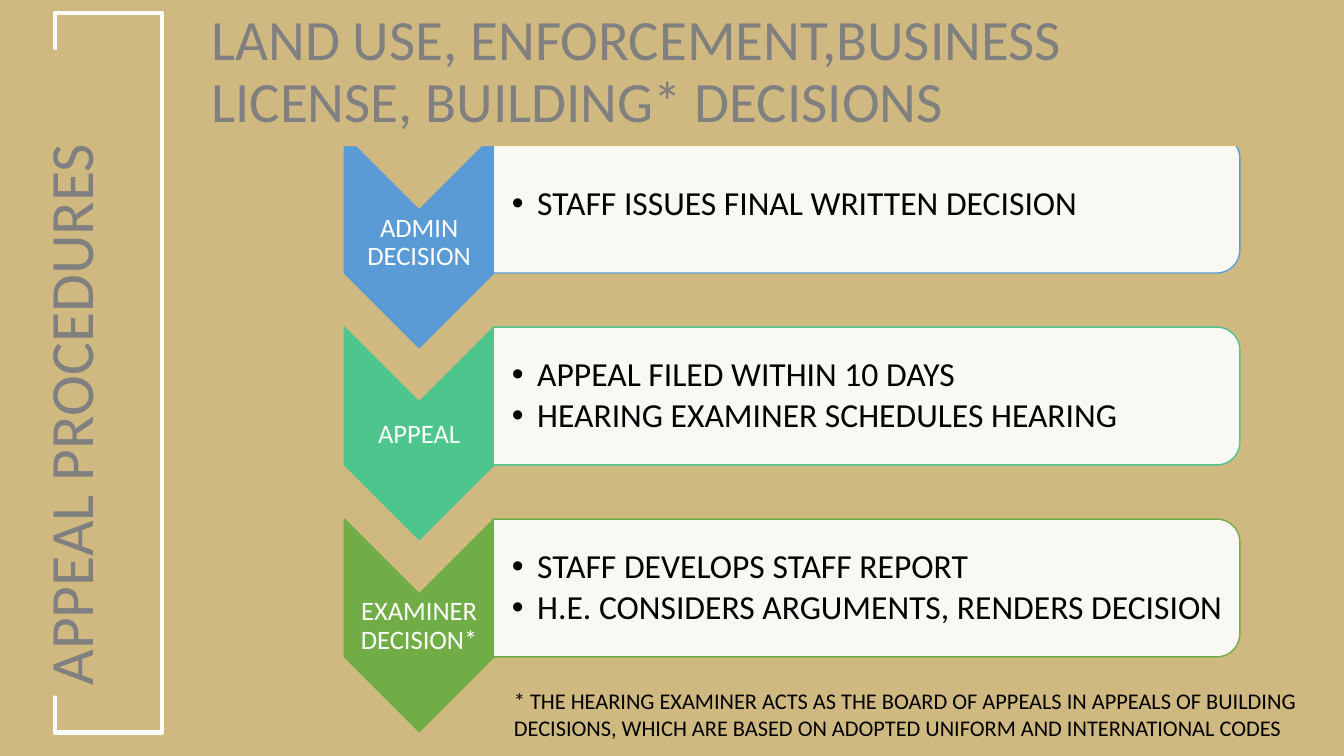
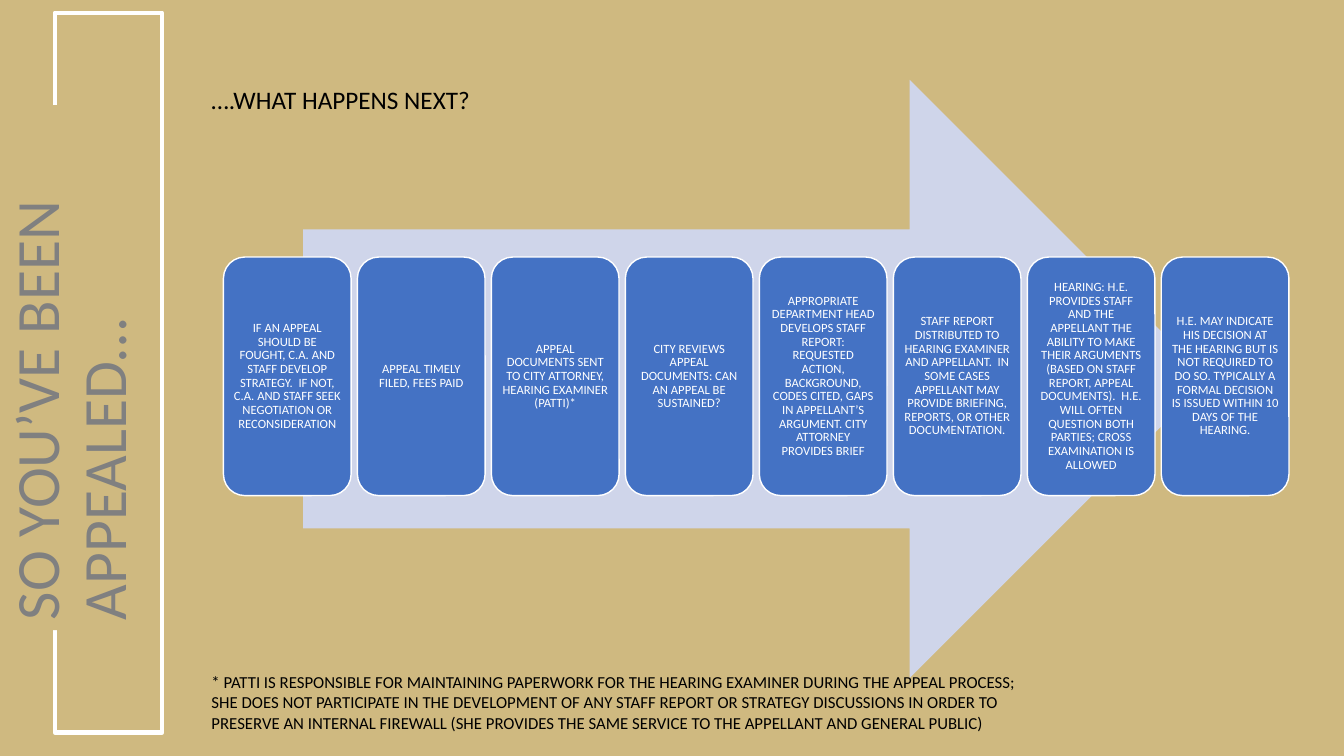
from lxml import etree
from pptx import Presentation
from pptx import util as u
from pptx.dml.color import RGBColor
from pptx.enum import shapes, text
from pptx.oxml.ns import qn

COLORS = {
    "sand": "CFB980", "white": "FFFFFF", "black": "000000", "gray": "808080",
    "sky": "5B9BD5", "mint": "4DC58D", "leaf": "70AD47",
    "blue": "4472C4", "haze": "CFD5EA",
}
FONT = "Calibri"
COLUMNS, ROWS = 160, 90
SHAPE = shapes.MSO_SHAPE
ALIGN, ANCHOR = text.PP_ALIGN, text.MSO_ANCHOR

STEPS = [
    ("sky", "ADMIN DECISION", ["STAFF ISSUES FINAL WRITTEN DECISION"]),
    ("mint", "APPEAL", ["APPEAL FILED WITHIN 10 DAYS",
                        "HEARING EXAMINER SCHEDULES HEARING"]),
    ("leaf", "EXAMINER DECISION*", ["STAFF DEVELOPS STAFF REPORT",
                                    "H.E. CONSIDERS ARGUMENTS, RENDERS DECISION"]),
]
CARDS = [
    "IF AN APPEAL SHOULD BE FOUGHT, C.A. AND STAFF DEVELOP STRATEGY.  IF NOT, "
    "C.A. AND STAFF SEEK NEGOTIATION OR RECONSIDERATION",
    "APPEAL TIMELY FILED, FEES PAID",
    "APPEAL DOCUMENTS SENT TO CITY ATTORNEY, HEARING EXAMINER (PATTI)*",
    "CITY REVIEWS APPEAL DOCUMENTS: CAN AN APPEAL BE SUSTAINED?",
    "APPROPRIATE DEPARTMENT HEAD DEVELOPS STAFF REPORT: REQUESTED ACTION, "
    "BACKGROUND, CODES CITED, GAPS IN APPELLANT’S ARGUMENT. CITY ATTORNEY "
    "PROVIDES BRIEF",
    "STAFF REPORT DISTRIBUTED TO HEARING EXAMINER AND APPELLANT.  IN SOME CASES "
    "APPELLANT MAY PROVIDE BRIEFING, REPORTS, OR OTHER DOCUMENTATION.",
    "HEARING: H.E. PROVIDES STAFF AND THE APPELLANT THE ABILITY TO MAKE THEIR "
    "ARGUMENTS (BASED ON STAFF REPORT, APPEAL DOCUMENTS).  H.E. WILL OFTEN "
    "QUESTION BOTH PARTIES; CROSS EXAMINATION IS ALLOWED",
    "H.E. MAY INDICATE HIS DECISION AT THE HEARING BUT IS NOT REQUIRED TO DO SO. "
    "TYPICALLY A FORMAL DECISION IS ISSUED WITHIN 10 DAYS OF THE HEARING.",
]


def rgb(name):
    return RGBColor.from_string(COLORS[name])


def write(box, lines, *, size, color="black", align=ALIGN.LEFT, anchor=ANCHOR.MIDDLE,
          spacing=0.9, after=0, insets=(7.2, 3.6, 7.2, 3.6), bullet=False):
    """Fill a box with one paragraph per line; insets are points: left, top, right, bottom."""
    frame = box.text_frame
    frame.word_wrap = True
    frame.vertical_anchor = anchor
    (frame.margin_left, frame.margin_top,
     frame.margin_right, frame.margin_bottom) = map(u.Pt, insets)
    for index, line in enumerate(lines):
        para = frame.add_paragraph() if index else frame.paragraphs[0]
        para.alignment = align
        para.line_spacing = spacing
        para.space_after = u.Pt(after)
        if bullet:
            props = para._p.get_or_add_pPr()
            props.set("marL", str(u.Pt(18)))
            props.set("indent", str(-u.Pt(18)))
            etree.SubElement(props, qn("a:buFont")).set("typeface", "Arial")
            etree.SubElement(props, qn("a:buChar")).set("char", "•")
        span = para.add_run()
        span.text = line
        span.font.name = FONT
        span.font.size = u.Pt(size)
        span.font.color.rgb = rgb(color)


class Board:
    """Holds the deck and its current page; places are (column, row, columns, rows)."""

    def __init__(self):
        self.deck = Presentation()
        self.deck.slide_width, self.deck.slide_height = u.Inches(13.333), u.Inches(7.5)
        self.page = None

    def area(self, place):
        column = self.deck.slide_width / COLUMNS
        row = self.deck.slide_height / ROWS
        return [round(n * unit) for n, unit in zip(place, (column, row) * 2)]

    def shape(self, kind, place, fill=None, line=None, weight=1, turn=0, alpha=None):
        """Add a shape that covers place as seen after a turn of 0, 90 or 270 degrees."""
        left, top, width, height = self.area(place)
        if turn:
            left, top = left + (width - height) // 2, top + (height - width) // 2
            width, height = height, width
        box = self.page.shapes.add_shape(kind, left, top, width, height)
        box.rotation = turn
        box.shadow.inherit = False
        if fill:
            box.fill.solid()
            box.fill.fore_color.rgb = rgb(fill)
        else:
            box.fill.background()
        if alpha:
            tint = box._element.spPr.find(qn("a:solidFill"))[0]
            etree.SubElement(tint, qn("a:alpha")).set("val", str(alpha * 1000))
        if line:
            box.line.color.rgb = rgb(line)
            box.line.width = u.Pt(weight)
        else:
            box.line.fill.background()
        return box

    def label(self, place, lines, **style):
        write(self.page.shapes.add_textbox(*self.area(place)), lines, **style)

    def note(self, place, line, size):
        self.label(place, [line], size=size, anchor=ANCHOR.TOP, spacing=1)

    def banner(self, place, title, size=44, turn=0):
        box = self.shape(SHAPE.RECTANGLE, place, "sand", turn=turn)
        write(box, [title], size=size, color="gray")

    def start(self, title, row, rows):
        """Open a page with its bracket and a sideways title that covers the given rows."""
        self.page = self.deck.slides.add_slide(self.deck.slide_layouts[6])
        self.page.background.fill.solid()
        self.page.background.fill.fore_color.rgb = rgb("sand")
        self.shape(SHAPE.RECTANGLE, (6.5, 1.5, 12.8, 85.7), line="white", weight=3, turn=270)
        self.banner((0, row, 17.4, rows), title, turn=270)

    def step(self, row, color, name, points):
        self.shape(SHAPE.CHEVRON, (41, row, 17.8, 25.3), color, color, turn=90)
        self.label((41, row + 9, 17.8, 7.6), [name], size=19, color="white",
                   align=ALIGN.CENTER, insets=(1, 1, 1, 1))
        self.shape(SHAPE.ROUND_2_SAME_RECTANGLE, (58.7, row, 88.9, 16.4),
                   "white", color, turn=90, alpha=90)
        self.label((58.7, row + 0.8, 88.1, 14.9), points, size=24, after=3.5,
                   insets=(13.5, 1.5, 1.5, 1.5), bullet=True)

    def card(self, column, words):
        box = self.shape(SHAPE.ROUNDED_RECTANGLE, (column, 30.6, 15.2, 28.4), "blue", "white")
        write(box, [words], size=9, color="white", align=ALIGN.CENTER, insets=(3, 3, 3, 3))


def main():
    board = Board()

    board.start("APPEAL PROCEDURES", 5.9, 76.9)
    for index, step in enumerate(STEPS):
        board.step(16.1 + 22.85 * index, *step)
    board.banner((24, 0, 125, 17.4),
                 "LAND USE, ENFORCEMENT,BUSINESS LICENSE, BUILDING* DECISIONS", size=40.7)
    board.note((60, 81.2, 97.3, 7.7),
               "* THE HEARING EXAMINER ACTS AS THE BOARD OF APPEALS IN APPEALS OF BUILDING "
               "DECISIONS, WHICH ARE BASED ON ADOPTED UNIFORM AND INTERNATIONAL CODES", 16)

    board.start("SO YOU’VE BEEN APPEALED…", 12.5, 62.5)
    board.note((24, 9.5, 130, 12.1), "….WHAT HAPPENS NEXT?", 18)
    board.shape(SHAPE.RIGHT_ARROW, (36.1, 9.5, 107.8, 71.2), "haze")
    for index, words in enumerate(CARDS):
        board.card(26.6 + 15.95 * index, words)
    board.note((24, 79.4, 100.7, 8.5),
               "* PATTI IS RESPONSIBLE FOR MAINTAINING PAPERWORK FOR THE HEARING EXAMINER "
               "DURING THE APPEAL PROCESS; SHE DOES NOT PARTICIPATE IN THE DEVELOPMENT OF "
               "ANY STAFF REPORT OR STRATEGY DISCUSSIONS IN ORDER TO PRESERVE AN INTERNAL "
               "FIREWALL (SHE PROVIDES THE SAME SERVICE TO THE APPELLANT AND GENERAL PUBLIC)",
               12)

    board.deck.save("out.pptx")


if __name__ == "__main__":
    main()
